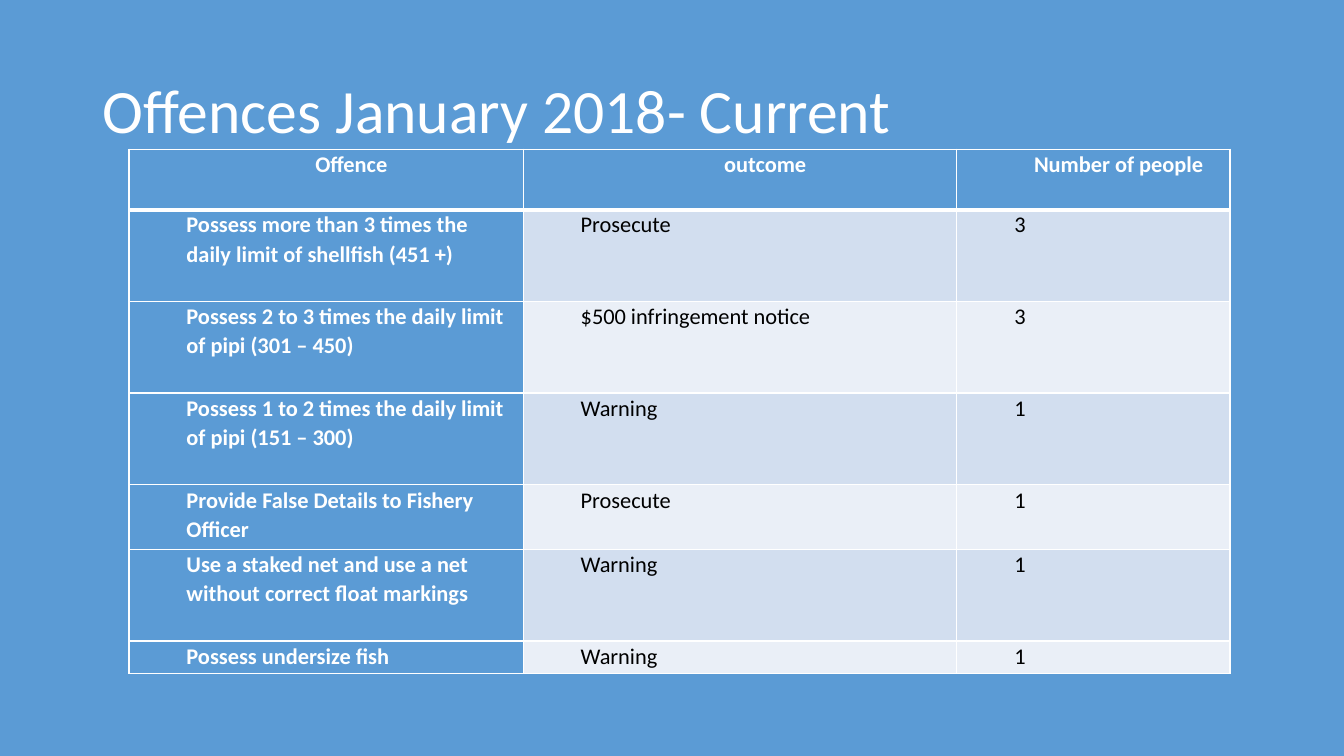
from lxml.etree import SubElement
from pptx import Presentation
from pptx.dml.color import RGBColor
from pptx.enum.text import MSO_ANCHOR, PP_ALIGN
from pptx.oxml.ns import qn
from pptx.util import Inches, Pt

# Content
TITLE = "Offences January 2018- Current"
ROWS = [
    ("Offence", "outcome", "Number of people"),
    ("Possess more than 3 times the daily limit of shellfish (451 +)", "Prosecute", "3"),
    ("Possess 2 to 3 times the daily limit of pipi (301 – 450)", "$500 infringement notice", "3"),
    ("Possess 1 to 2 times the daily limit of pipi (151 – 300)", "Warning", "1"),
    ("Provide False Details to Fishery Officer", "Prosecute", "1"),
    ("Use a staked net and use a net without correct float markings", "Warning", "1"),
    ("Possess undersize fish", "Warning", "1"),
]
COLUMN_WIDTHS = [3.91, 4.3, 2.71]
ROW_HEIGHTS = [0.6, 0.91, 0.91, 0.91, 0.64, 0.91, 0.32]

# Style
FONT = "Calibri"
BLUE = RGBColor(0x5B, 0x9B, 0xD5)
WHITE = RGBColor(0xFF, 0xFF, 0xFF)
BLACK = RGBColor(0x00, 0x00, 0x00)
BANDS = [RGBColor(0xEA, 0xEF, 0xF7), RGBColor(0xD2, 0xDE, 0xEF)]
TEXT_INDENT = Inches(0.5)


def style_paragraph(paragraph, size, color, bold, spacing):
    paragraph.line_spacing = spacing
    font = paragraph.font
    font.name, font.size, font.bold = FONT, Pt(size), bold
    font.color.rgb = color


def add_borders(cell, top, bottom):
    properties = cell._tc.get_or_add_tcPr()
    for side, width in (("lnL", 1), ("lnR", 1), ("lnT", top), ("lnB", bottom)):
        line = SubElement(properties, qn(f"a:{side}"), w=str(Pt(width)))
        fill = SubElement(line, qn("a:solidFill"))
        SubElement(fill, qn("a:srgbClr"), val=str(WHITE))


def fill_cell(cell, text, row, column):
    is_header = row == 0
    is_label = is_header or column == 0
    add_borders(cell, top=3 if row == 1 else 1, bottom=3 if is_header else 1)
    cell.fill.solid()
    cell.fill.fore_color.rgb = BLUE if is_label else BANDS[row % 2]
    cell.margin_left = cell.margin_right = Inches(0.07)
    cell.margin_top = cell.margin_bottom = 0
    cell.text = text
    paragraph = cell.text_frame.paragraphs[0]
    paragraph._p.get_or_add_pPr().set("marL", str(TEXT_INDENT))
    paragraph.alignment = PP_ALIGN.CENTER if is_header else PP_ALIGN.LEFT
    style_paragraph(paragraph, 16, WHITE if is_label else BLACK, is_label, 1.07)


# Slide
presentation = Presentation()
presentation.slide_width = Inches(13.33)
presentation.slide_height = Inches(7.5)
slide = presentation.slides.add_slide(presentation.slide_layouts[6])
slide.background.fill.solid()
slide.background.fill.fore_color.rgb = BLUE

# Title
title = slide.shapes.add_textbox(Inches(0.92), Inches(0.4), Inches(11.5), Inches(1.45))
title.text_frame.word_wrap = True
title.text_frame.vertical_anchor = MSO_ANCHOR.MIDDLE
title.text_frame.text = TITLE
style_paragraph(title.text_frame.paragraphs[0], 44, WHITE, False, 0.9)

# Offence table
table = slide.shapes.add_table(
    len(ROWS), len(COLUMN_WIDTHS), Inches(1.28), Inches(1.48),
    Inches(sum(COLUMN_WIDTHS)), Inches(sum(ROW_HEIGHTS)),
).table
table.first_col = True
for table_column, width in zip(table.columns, COLUMN_WIDTHS):
    table_column.width = Inches(width)
for row, (texts, height) in enumerate(zip(ROWS, ROW_HEIGHTS)):
    table.rows[row].height = Inches(height)
    for column, text in enumerate(texts):
        fill_cell(table.cell(row, column), text, row, column)

presentation.save("out.pptx")
